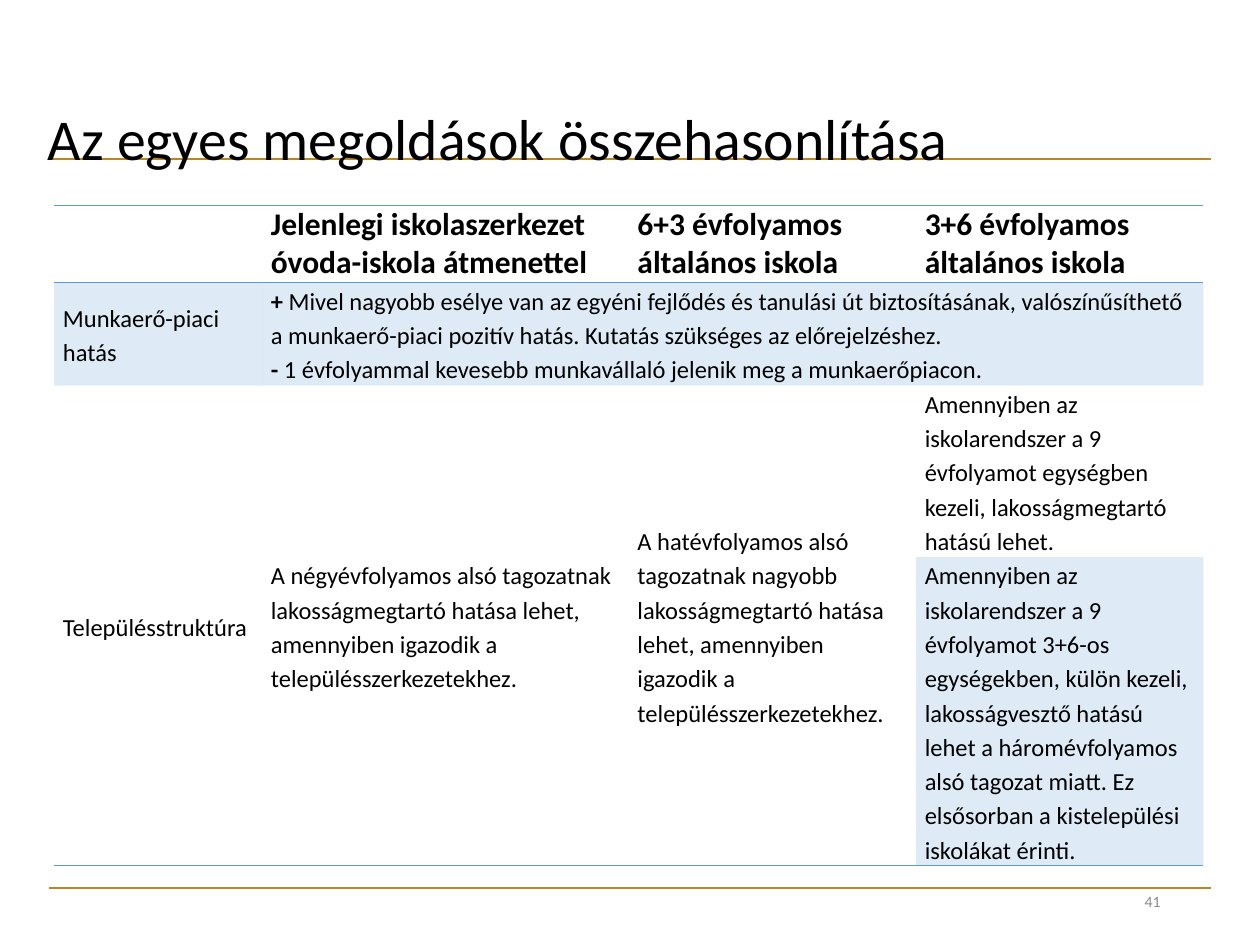
import pptx
import pptx.dml.color
import pptx.enum.shapes
import pptx.enum.text
import pptx.oxml
import pptx.oxml.ns
import pptx.util
from pptx.util import Inches

COLORS = {"gold": "B78727", "blue": "5B9BD5", "text": "000000", "number": "8C8C8C"}
FONT = "Calibri"
PLAIN_TABLE = "{2D5ABB26-0587-4C30-8999-92F81FD0307C}"
ALIGN = pptx.enum.text.PP_ALIGN
MIDDLE = pptx.enum.text.MSO_ANCHOR.MIDDLE

COL_WIDTHS = [1.65, 2.91, 2.28, 2.28]
ROW_HEIGHTS = [0.61, 0.82, 1.36, 2.45]
LAST_ROW = len(ROW_HEIGHTS) - 1
# Each cell is a list of paragraphs, each paragraph a list of (text, bold) runs.
HEADERS = {
    (0, 1): ["Jelenlegi iskolaszerkezet óvoda-iskola átmenettel"],
    (0, 2): ["6+3 évfolyamos", "általános iskola"],
    (0, 3): ["3+6 évfolyamos", "általános iskola"],
}
BODY = {
    (1, 0): "Munkaerő-piaci hatás",
    (2, 0): "Településstruktúra",
    (2, 1): "A négyévfolyamos alsó tagozatnak lakosságmegtartó hatása lehet, "
            "amennyiben igazodik a településszerkezetekhez.",
    (2, 2): "A hatévfolyamos alsó tagozatnak nagyobb lakosságmegtartó hatása lehet, "
            "amennyiben igazodik a településszerkezetekhez.",
    (2, 3): "Amennyiben az iskolarendszer a 9 évfolyamot egységben kezeli, "
            "lakosságmegtartó hatású lehet.",
    (3, 3): "Amennyiben az iskolarendszer a 9 évfolyamot 3+6-os egységekben, külön kezeli, "
            "lakosságvesztő hatású lehet a háromévfolyamos alsó tagozat miatt. "
            "Ez elsősorban a kistelepülési iskolákat érinti.",
}
LABOUR_EFFECTS = [
    [("+ ", True), ("Mivel nagyobb esélye van az egyéni fejlődés és tanulási út biztosításának, "
                    "valószínűsíthető a munkaerő-piaci pozitív hatás. "
                    "Kutatás szükséges az előrejelzéshez.", False)],
    [("-", True), (" 1 évfolyammal kevesebb munkavállaló jelenik meg a munkaerőpiacon.", False)],
]
CELLS = {pos: [[(line, True)] for line in lines] for pos, lines in HEADERS.items()}
CELLS.update({pos: [[(text, False)]] for pos, text in BODY.items()})
CELLS[1, 1] = LABOUR_EFFECTS
MERGES = [((1, 1), (1, 3))] + [((2, c), (3, c)) for c in range(3)]
SHADED = [(1, 0), (1, 1), (3, 3)]


class SlideBuilder:
    def __init__(self, prs):
        self.s = prs.slides.add_slide(prs.slide_layouts[5])

    def style(self, font, size, color="text"):
        font.name = FONT
        font.size = pptx.util.Pt(size)
        font.color.rgb = pptx.dml.color.RGBColor.from_string(COLORS[color])

    def rule(self, y):
        """Draw a full-width horizontal line."""
        line = self.s.shapes.add_connector(
            pptx.enum.shapes.MSO_CONNECTOR.STRAIGHT,
            Inches(0.39), Inches(y), Inches(9.61), Inches(y))
        line.line.color.rgb = pptx.dml.color.RGBColor.from_string(COLORS["gold"])
        line.line.width = pptx.util.Pt(1)
        line._element.spPr.append(pptx.oxml.parse_xml(
            f'<a:effectLst {pptx.oxml.ns.nsdecls("a")}/>'))

    def title(self, text, x, y, w, h):
        sp = self.s.shapes.title
        sp.left, sp.top, sp.width, sp.height = map(Inches, (x, y, w, h))
        tf = sp.text_frame
        tf.text = text
        tf.auto_size = pptx.enum.text.MSO_AUTO_SIZE.NONE
        tf.vertical_anchor = MIDDLE
        p = tf.paragraphs[0]
        p.alignment = ALIGN.LEFT
        p.line_spacing = 0.9
        self.style(p.font, 33)

    def page_number(self, text, x, y, w, h):
        tf = self.s.shapes.add_textbox(*map(Inches, (x, y, w, h))).text_frame
        tf.word_wrap = True
        tf.vertical_anchor = MIDDLE
        p = tf.paragraphs[0]
        p.text = text
        p.alignment = ALIGN.RIGHT
        self.style(p.font, 9, "number")

    def fill_cell(self, cell, paragraphs, header):
        tf = cell.text_frame
        for i, runs in enumerate(paragraphs):
            p = tf.add_paragraph() if i else tf.paragraphs[0]
            self.style(p.font, 18 if header else 14)
            if not header:
                p.line_spacing = 1.15
            for text, bold in runs:
                r = p.add_run()
                r.text = text
                r.font.bold = bold

    def shade(self, cell):
        """Give the cell a blue fill at 20 % opacity."""
        cell.fill.solid()
        cell.fill.fore_color.rgb = pptx.dml.color.RGBColor.from_string(COLORS["blue"])
        color = cell._tc.tcPr.find(".//" + pptx.oxml.ns.qn("a:srgbClr"))
        color.append(pptx.oxml.parse_xml(
            f'<a:alpha {pptx.oxml.ns.nsdecls("a")} val="20000"/>'))

    def border(self, cell, sides):
        for i, side in enumerate(sides):
            cell._tc.get_or_add_tcPr().insert(i, pptx.oxml.parse_xml(
                f'<a:ln{side} {pptx.oxml.ns.nsdecls("a")} w="12700"><a:solidFill>'
                f'<a:srgbClr val="{COLORS["blue"]}"/></a:solidFill></a:ln{side}>'))

    def table(self, x, y):
        frame = self.s.shapes.add_table(
            len(ROW_HEIGHTS), len(COL_WIDTHS), Inches(x), Inches(y),
            Inches(sum(COL_WIDTHS)), Inches(sum(ROW_HEIGHTS)))
        table = frame.table
        table.horz_banding = False
        table._tbl.tblPr.find(pptx.oxml.ns.qn("a:tableStyleId")).text = PLAIN_TABLE
        for column, width in zip(table.columns, COL_WIDTHS):
            column.width = Inches(width)
        for row, height in zip(table.rows, ROW_HEIGHTS):
            row.height = Inches(height)
        for start, end in MERGES:
            table.cell(*start).merge(table.cell(*end))
        for row in range(len(ROW_HEIGHTS)):
            for col in range(len(COL_WIDTHS)):
                cell = table.cell(row, col)
                cell.margin_left = cell.margin_right = Inches(0.07)
                cell.margin_top = cell.margin_bottom = 0
                cell.vertical_anchor = MIDDLE
                self.fill_cell(cell, CELLS.get((row, col), []), row == 0)
                if (row, col) in SHADED:
                    self.shade(cell)
                else:
                    cell.fill.background()
                if row == 0:
                    self.border(cell, "TB")
                elif row == LAST_ROW or (cell.is_merge_origin and cell.span_height > 1):
                    self.border(cell, "B")


def main():
    prs = pptx.Presentation()
    prs.slide_width, prs.slide_height = Inches(10), Inches(7.5)
    slide = SlideBuilder(prs)
    for y in (1.26, 7.05):
        slide.rule(y)
    slide.title("Az egyes megoldások összehasonlítása", 0.28, 0.4, 8.62, 1.45)
    slide.table(0.43, 1.63)
    slide.page_number("41", 7.06, 6.95, 2.25, 0.4)
    # The title text lies over the upper line.
    title = slide.s.shapes.title._element
    title.getparent().insert_element_before(title, "p:graphicFrame")
    prs.save("out.pptx")


if __name__ == "__main__":
    main()
